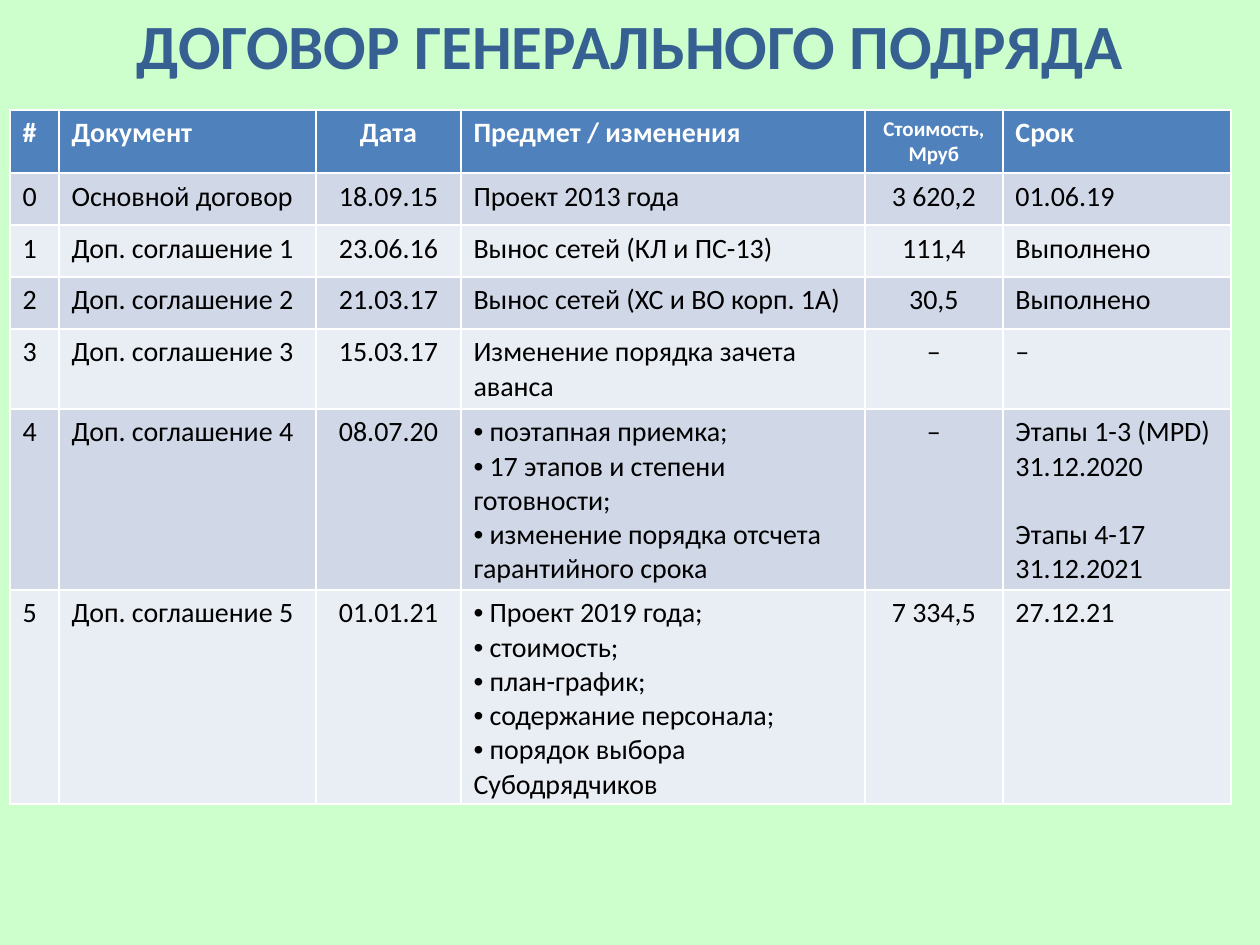
"""Build a slide listing a general contract and its supplementary agreements."""
import pptx
import pptx.dml.color
import pptx.enum.text
import pptx.util
from lxml import etree

TITLE = "ДОГОВОР ГЕНЕРАЛЬНОГО ПОДРЯДА"
HEADINGS = ("#", "Документ", "Дата", "Предмет / изменения", "Стоимость, Мруб", "Срок")
AGREEMENTS = [
    ("0", "Основной договор", "18.09.15", "Проект 2013 года", "3 620,2", "01.06.19"),
    ("1", "Доп. соглашение 1", "23.06.16", "Вынос сетей (КЛ и ПС-13)", "111,4", "Выполнено"),
    ("2", "Доп. соглашение 2", "21.03.17", "Вынос сетей (ХС и ВО корп. 1А)", "30,5", "Выполнено"),
    ("3", "Доп. соглашение 3", "15.03.17", "Изменение порядка зачета аванса", "–", "–"),
    ("4", "Доп. соглашение 4", "08.07.20",
     ["поэтапная приемка;", "17 этапов и степени готовности;",
      "изменение порядка отсчета гарантийного срока"],
     "–", (("Этапы 1-3 (MPD)", "31.12.2020"), ("Этапы 4-17", "31.12.2021"))),
    ("5", "Доп. соглашение 5", "01.01.21",
     ["Проект 2019 года;", "стоимость;", "план-график;", "содержание персонала;",
      "порядок выбора Субодрядчиков"],
     "7 334,5", "27.12.21"),
]
CENTRED_COLUMNS = (2, 4)
COST_COLUMN = 4

THEME = {
    "font": "Calibri", "background": "CCFFCC", "title": "376092",
    "header": "4F81BD", "header_text": "FFFFFF", "text": "000000",
    "bands": ("D0D8E8", "E9EDF4"),
    "title_size": 36, "size": 16, "small_size": 12, "stage_gap": 19.5,
}
PX = 914400 / 126
TITLE_BOX = (0, 0, 1260, 89)
TABLE_LEFT, TABLE_TOP = 10, 110
COLUMN_WIDTHS = (49, 257, 145, 404, 138, 228)
ROW_HEIGHTS = (62, 52, 52, 52, 79, 181, 214)


def px(length):
    return pptx.util.Emu(round(length * PX))


def rgb(value):
    return pptx.dml.color.RGBColor.from_string(value)


def write(frame, text, *, size=THEME["size"], color=THEME["text"], bold=False,
          centred=False, bullet=False, first=True, gap=0):
    paragraph = frame.paragraphs[0] if first else frame.add_paragraph()
    align = pptx.enum.text.PP_ALIGN
    paragraph.alignment = align.CENTER if centred else align.LEFT
    if gap:
        paragraph.space_before = pptx.util.Pt(gap)
    if bullet:
        properties = paragraph._p.get_or_add_pPr()
        properties.set("marL", "0")
        properties.set("indent", "0")
        namespace = pptx.oxml.ns.qn("a:buFont"), pptx.oxml.ns.qn("a:buChar")
        etree.SubElement(properties, namespace[0], typeface="Arial")
        etree.SubElement(properties, namespace[1], char="•")
        text = f" {text}"
    run = paragraph.add_run()
    run.text = text
    run.font.name = THEME["font"]
    run.font.size = pptx.util.Pt(size)
    run.font.bold = bold
    run.font.color.rgb = rgb(color)


def fill_cell(cell, content, fill, **style):
    cell.fill.solid()
    cell.fill.fore_color.rgb = rgb(fill)
    frame = cell.text_frame
    if isinstance(content, str):
        write(frame, content, **style)
    elif isinstance(content, list):
        for index, item in enumerate(content):
            write(frame, item, bullet=True, first=index == 0, **style)
    else:
        for index, (stages, deadline) in enumerate(content):
            gap = THEME["stage_gap"] if index else 0
            write(frame, stages, first=index == 0, gap=gap, **style)
            write(frame, deadline, first=False, **style)


def add_title(slide):
    title = slide.shapes.title
    title.left, title.top, title.width, title.height = map(px, TITLE_BOX)
    frame = title.text_frame
    frame.word_wrap = True
    frame.auto_size = pptx.enum.text.MSO_AUTO_SIZE.SHAPE_TO_FIT_TEXT
    frame.vertical_anchor = pptx.enum.text.MSO_ANCHOR.TOP
    write(frame, TITLE, size=THEME["title_size"], color=THEME["title"], bold=True, centred=True)


def add_agreements(slide):
    table = slide.shapes.add_table(
        len(ROW_HEIGHTS), len(COLUMN_WIDTHS), px(TABLE_LEFT), px(TABLE_TOP),
        px(sum(COLUMN_WIDTHS)), px(sum(ROW_HEIGHTS))).table
    for column, width in zip(table.columns, COLUMN_WIDTHS):
        column.width = px(width)
    for row, height in zip(table.rows, ROW_HEIGHTS):
        row.height = px(height)
    for index, heading in enumerate(HEADINGS):
        size = THEME["small_size"] if index == COST_COLUMN else THEME["size"]
        fill_cell(table.cell(0, index), heading, THEME["header"], size=size,
                  color=THEME["header_text"], bold=True, centred=index in CENTRED_COLUMNS)
    for number, agreement in enumerate(AGREEMENTS):
        for index, content in enumerate(agreement):
            fill_cell(table.cell(number + 1, index), content, THEME["bands"][number % 2],
                      centred=index in CENTRED_COLUMNS)


def main():
    deck = pptx.Presentation()
    deck.slide_width, deck.slide_height = px(1260), px(945)
    slide = deck.slides.add_slide(deck.slide_layouts[5])
    slide.background.fill.solid()
    slide.background.fill.fore_color.rgb = rgb(THEME["background"])
    add_title(slide)
    add_agreements(slide)
    deck.save("out.pptx")


if __name__ == "__main__":
    main()
